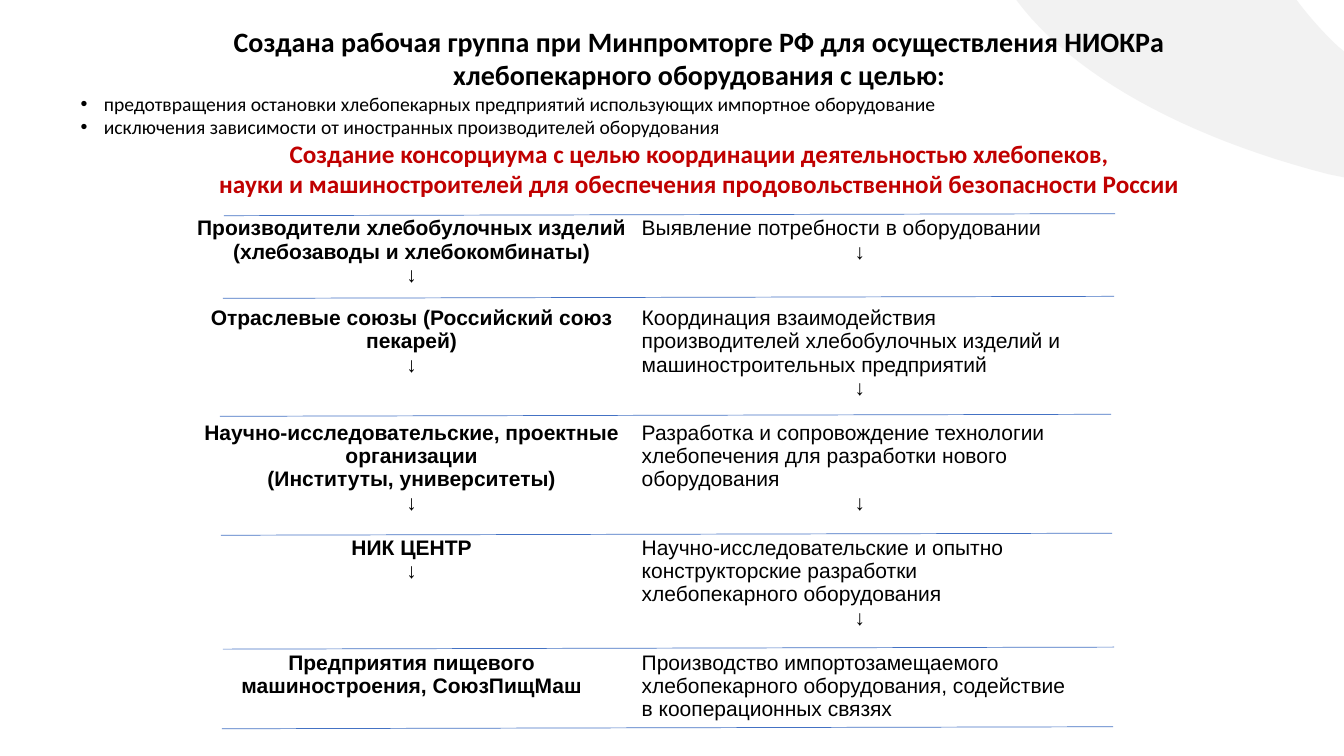
from dataclasses import dataclass

from lxml.etree import SubElement
from pptx import Presentation
from pptx.dml.color import RGBColor
from pptx.enum.shapes import MSO_CONNECTOR as Connector
from pptx.enum.text import MSO_ANCHOR as Anchor, MSO_AUTO_SIZE as AutoSize, PP_ALIGN as Align
from pptx.oxml.ns import qn
from pptx.util import Inches, Pt


@dataclass(frozen=True)
class Theme:
    heading_font: str = "Calibri"
    table_font: str = "Arial"
    text: RGBColor = RGBColor(0, 0, 0)
    accent: RGBColor = RGBColor(0xC0, 0, 0)
    rule: RGBColor = RGBColor(0x44, 0x72, 0xC4)
    corner: RGBColor = RGBColor(0xF2, 0xF2, 0xF2)
    title_size: int = 20
    goal_size: int = 14
    accent_size: int = 18
    table_size: int = 15
    rule_width: float = 0.5


THEME = Theme()
ARROW = "↓"

TITLE = ["Создана рабочая группа при Минпромторге РФ для осуществления НИОКРа",
         "хлебопекарного оборудования с целью:"]
GOALS = ["предотвращения остановки хлебопекарных предприятий использующих импортное оборудование",
         "исключения зависимости от иностранных производителей оборудования"]
CONSORTIUM = ["Создание консорциума с целью координации деятельностью хлебопеков,",
              "науки и машиностроителей для обеспечения продовольственной безопасности России"]

# Participant lines, then the participant's role
STAGES = [
    (["Производители хлебобулочных изделий", "(хлебозаводы и хлебокомбинаты)"],
     "Выявление потребности в оборудовании"),
    (["Отраслевые союзы (Российский союз пекарей)"],
     "Координация взаимодействия производителей хлебобулочных изделий "
     "и машиностроительных предприятий"),
    (["Научно-исследовательские, проектные организации", "(Институты, университеты)"],
     "Разработка и сопровождение технологии хлебопечения для разработки нового оборудования"),
    (["НИК ЦЕНТР"],
     "Научно-исследовательские и опытно конструкторские разработки "
     "хлебопекарного оборудования"),
    (["Предприятия пищевого машиностроения, СоюзПищМаш"],
     "Производство импортозамещаемого хлебопекарного оборудования, "
     "содействие в кооперационных связях"),
]
ROW_HEIGHTS = [0.89, 1.14, 1.14, 1.14, 0.89]
# Left ends of the rules, relative to the table
RULE_STARTS = [(0.36, 0.05), (0.35, 0.87), (0.32, 2.04), (0.33, 3.22), (0.35, 4.35), (0.34, 5.14)]
RULE_LENGTH, RULE_RISE = 8.84, 0.02


def style_paragraph(paragraph, font_name, size, color, bold, alignment):
    paragraph.alignment = alignment
    paragraph.line_spacing = 1.0
    paragraph.space_before = Pt(0)
    for run in paragraph.runs:
        run.font.name = font_name
        run.font.size = Pt(size)
        run.font.bold = bold
        run.font.color.rgb = color


def add_bullet(paragraph, indent):
    properties = paragraph._p.get_or_add_pPr()
    properties.set("marL", str(indent))
    properties.set("indent", str(-indent))
    SubElement(properties, qn("a:buFont"), typeface="Arial")
    SubElement(properties, qn("a:buChar"), char="•")


def curve_points(start, control_1, control_2, end, steps=24):
    """Return points along a cubic Bézier curve, both ends included."""
    points = []
    for step in range(steps + 1):
        t = step / steps
        weights = ((1 - t) ** 3, 3 * t * (1 - t) ** 2, 3 * t ** 2 * (1 - t), t ** 3)
        corners = (start, control_1, control_2, end)
        points.append(tuple(sum(w * c[axis] for w, c in zip(weights, corners))
                            for axis in (0, 1)))
    return points


def add_corner_arc(slide, left, top, width, height):
    inner = curve_points((2.78, 0), (2.9, 0.16), (3.04, 0.32), (3.19, 0.46))
    outer = curve_points((3.1, 1.73), (1.66, 1.36), (0.55, 0.74), (0, 0))
    outline = inner + [(width, 0.51), (width, height)] + outer
    points = [(Inches(left + x), Inches(top + y)) for x, y in outline]
    builder = slide.shapes.build_freeform(*points[0])
    builder.add_line_segments(points[1:], close=True)
    shape = builder.convert_to_shape()
    shape.shadow.inherit = False
    shape.fill.solid()
    shape.fill.fore_color.rgb = THEME.corner
    shape.line.fill.background()


def place_heading(slide, left, top, width, height):
    title = slide.shapes.title
    title.left, title.top, title.width, title.height = map(Inches, (left, top, width, height))
    # Bring the heading in front of the corner arc
    title.element.getparent().append(title.element)
    frame = title.text_frame
    frame.word_wrap = True
    frame.auto_size = AutoSize.SHAPE_TO_FIT_TEXT
    frame.vertical_anchor = Anchor.TOP
    frame.text = "\n".join(TITLE + GOALS + CONSORTIUM)
    styles = ([(THEME.title_size, THEME.text, True, Align.CENTER)] * len(TITLE)
              + [(THEME.goal_size, THEME.text, False, Align.LEFT)] * len(GOALS)
              + [(THEME.accent_size, THEME.accent, True, Align.CENTER)] * len(CONSORTIUM))
    for paragraph, style in zip(frame.paragraphs, styles):
        if paragraph.text in GOALS:
            add_bullet(paragraph, Inches(0.23))
        style_paragraph(paragraph, THEME.heading_font, *style)


def fill_cell(cell, lines, bold, alignment):
    cell.fill.background()
    cell.margin_left = cell.margin_right = Inches(0.06)
    cell.margin_top = cell.margin_bottom = Inches(0.06)
    cell.text_frame.text = "\n".join(lines)
    for paragraph in cell.text_frame.paragraphs:
        is_arrow = paragraph.text == ARROW
        style_paragraph(paragraph, THEME.table_font, THEME.table_size, THEME.text,
                        bold and not is_arrow, Align.CENTER if is_arrow else alignment)


def add_stage_table(slide, left, top, width, height):
    frame = slide.shapes.add_table(len(STAGES), 2, *map(Inches, (left, top, width, height)))
    table = frame.table
    table.first_row = table.horz_banding = False
    for column in table.columns:
        column.width = Inches(width / 2)
    for index, (participants, role) in enumerate(STAGES):
        table.rows[index].height = Inches(ROW_HEIGHTS[index])
        arrow = [ARROW] if index < len(STAGES) - 1 else []
        fill_cell(table.cell(index, 0), participants + arrow, True, Align.CENTER)
        fill_cell(table.cell(index, 1), [role] + arrow, False, Align.LEFT)


def add_stage_rules(slide, left, top):
    for x, y in RULE_STARTS:
        start_x, start_y = left + x, top + y
        rule = slide.shapes.add_connector(
            Connector.STRAIGHT, Inches(start_x), Inches(start_y),
            Inches(start_x + RULE_LENGTH), Inches(start_y - RULE_RISE))
        rule.line.color.rgb = THEME.rule
        rule.line.width = Pt(THEME.rule_width)
        SubElement(rule.element.spPr, qn("a:effectLst"))


def main():
    presentation = Presentation()
    presentation.slide_width, presentation.slide_height = Inches(13.33), Inches(7.5)
    slide = presentation.slides.add_slide(presentation.slide_layouts.get_by_name("Title Only"))
    add_corner_arc(slide, 10.08, 0, 3.25, 1.76)
    add_stage_table(slide, 1.86, 2.09, 8.89, sum(ROW_HEIGHTS))
    place_heading(slide, 0.7, 0.19, 12.47, 1.85)
    add_stage_rules(slide, 1.86, 2.09)
    presentation.save("out.pptx")


if __name__ == "__main__":
    main()
